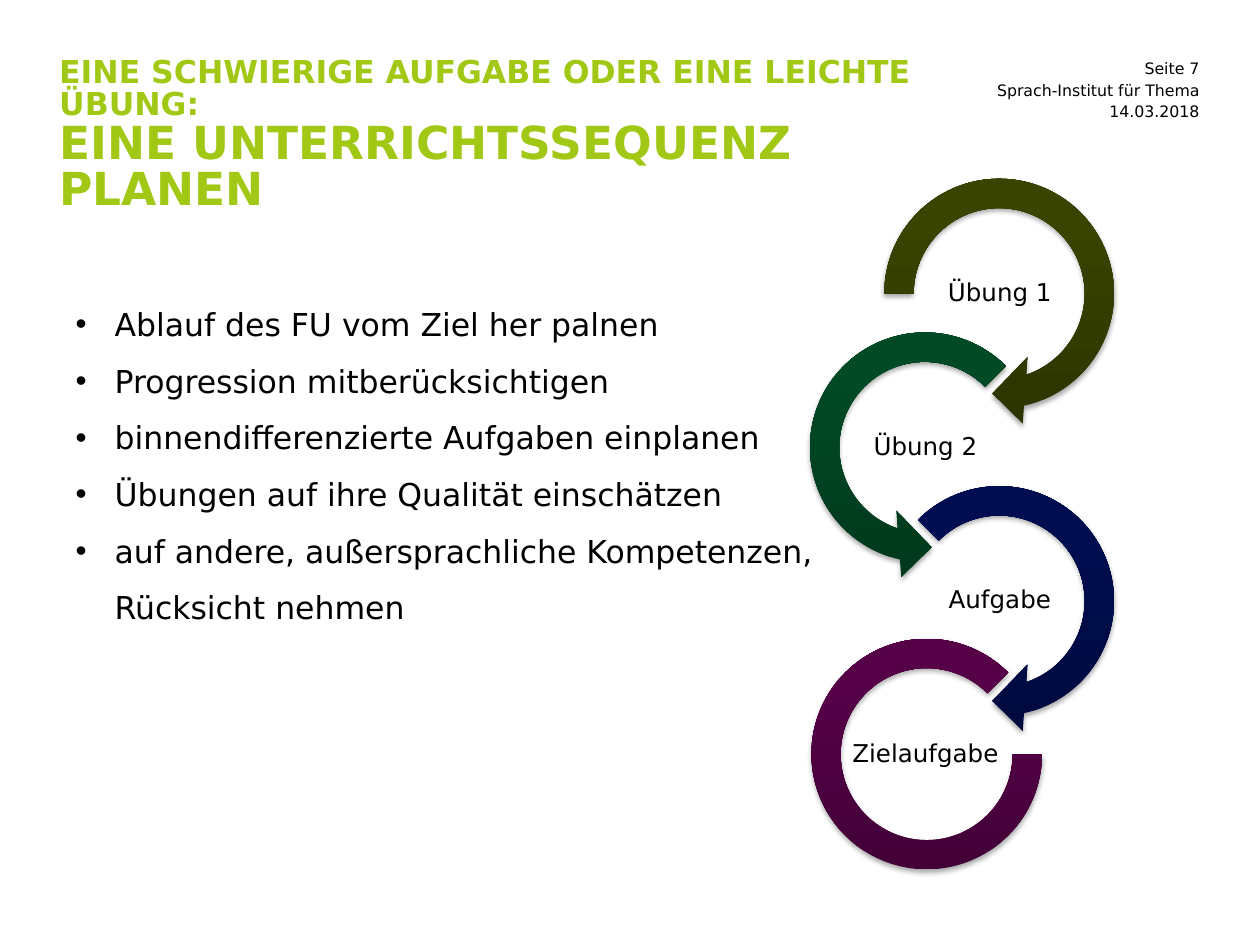
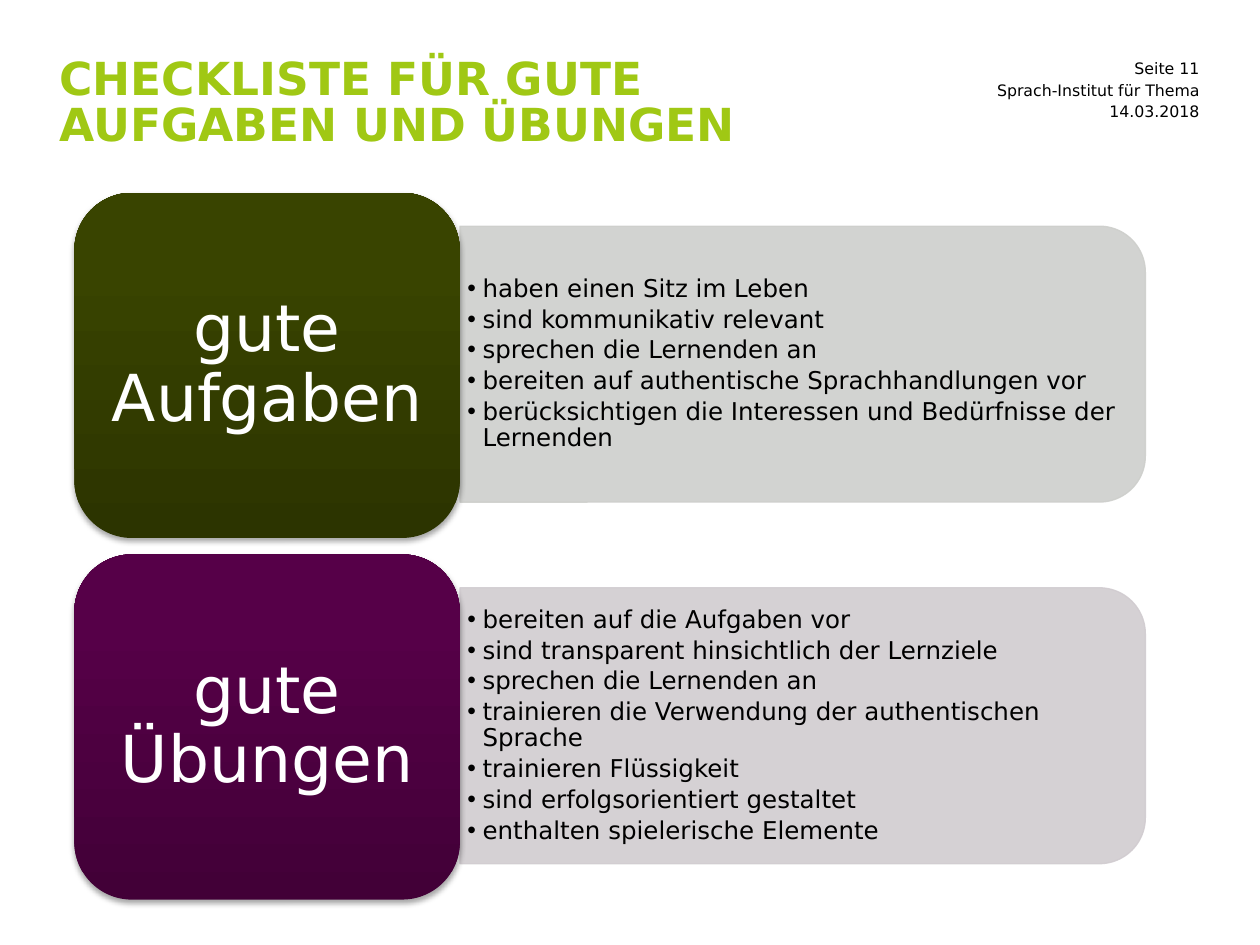
from collections import namedtuple
from lxml import etree
from pptx import Presentation
from pptx import util as u
from pptx.dml.color import RGBColor
from pptx.enum import shapes, text
from pptx.oxml import ns

COLS, ROWS = 100, 75
FONT = "DejaVu Sans"
HUES = {
    "ink": "000000", "white": "FFFFFF", "lime": "A0C814",
    "olive": "394400", "olive low": "2C3400",
    "green": "004A25", "green low": "00391D",
    "navy": "000D50", "navy low": "000A3E",
    "plum": "560048", "plum low": "420037",
    "pale olive": "CECFCC", "pale plum": "D1CCD0",
}
KIND = shapes.MSO_SHAPE
LEFT, MID, RIGHT = text.PP_ALIGN.LEFT, text.PP_ALIGN.CENTER, text.PP_ALIGN.RIGHT
TOP, CORE = text.MSO_ANCHOR.TOP, text.MSO_ANCHOR.MIDDLE

Box = namedtuple("Box", "x y w h")

deck = Presentation()
deck.slide_width, deck.slide_height = u.Inches(10), u.Inches(7.5)


def span(box):
    wide, high = deck.slide_width / COLS, deck.slide_height / ROWS
    return [int(n * unit) for n, unit in zip(box, (wide, high, wide, high))]


def part(box, x, y, w, h):
    return Box(box.x + x, box.y + y, w, h)


def hue(name):
    return RGBColor.from_string(HUES[name])


def place(shape, box):
    shape.left, shape.top, shape.width, shape.height = span(box)
    return shape


def node(root, tag, **attrs):
    return etree.SubElement(root, ns.qn(tag), {k: str(v) for k, v in attrs.items()})


def write(shape, paras, size=14, color="ink", bold=False, align=LEFT, anchor=CORE,
          pad=(0, 0), line=0.9, after=0, hang=0, wrap=True):
    frame = shape.text_frame
    frame.auto_size = text.MSO_AUTO_SIZE.NONE
    frame.word_wrap, frame.vertical_anchor = wrap, anchor
    frame.margin_left = frame.margin_right = u.Inches(pad[0])
    frame.margin_top = frame.margin_bottom = u.Inches(pad[1])
    for i, runs in enumerate(paras):
        para = frame.paragraphs[0] if i == 0 else frame.add_paragraph()
        para.alignment, para.line_spacing = align, line
        para.space_before, para.space_after = u.Pt(0), u.Pt(after)
        for j, (words, points) in enumerate([(runs, size)] if isinstance(runs, str) else runs):
            if j:
                para.add_line_break()
            for k, row in enumerate(words.split("\n")):
                if k:
                    para.add_line_break()
                run = para.add_run()
                run.text = row
                run.font.name, run.font.size, run.font.bold = FONT, u.Pt(points), bold
                run.font.color.rgb = hue(color)
        if hang:
            props = para._p.get_or_add_pPr()
            props.set("marL", str(u.Inches(hang)))
            props.set("indent", str(-u.Inches(hang)))
            node(props, "a:buFont", typeface="Arial")
            node(props, "a:buChar", char="•")


def label(slide, box, words, **form):
    write(slide.shapes.add_textbox(*span(box)), [words], **form)


def solid(slide, kind, box, tone, adjust=()):
    shape = slide.shapes.add_shape(kind, *span(box))
    for i, value in enumerate(adjust):
        shape.adjustments[i] = value
    shape.fill.gradient()
    shape.fill.gradient_angle = 90
    for stop, name, spot in zip(shape.fill.gradient_stops, (tone + " low", tone), (0, 0.8)):
        stop.color.rgb, stop.position = hue(name), spot
    shape.line.fill.background()
    shape.shadow.inherit = False
    effects = shape._element.spPr.find(ns.qn("a:effectLst"))
    shade = node(effects, "a:outerShdw", blurRad=u.Pt(3.1), dist=u.Pt(1.8),
                 dir=5400000, rotWithShape=0)
    node(node(shade, "a:srgbClr", val=HUES["ink"]), "a:alpha", val=35000)
    return shape


def panel(slide, box, tone):
    turned = Box(box.x + (box.w - box.h) / 2, box.y + (box.h - box.w) / 2, box.h, box.w)
    shape = slide.shapes.add_shape(KIND.ROUND_2_SAME_RECTANGLE, *span(turned))
    shape.rotation = 90
    shape.shadow.inherit = False
    shape.line.width = u.Pt(0.75)
    for fill in (shape.fill, shape.line.fill):
        fill.solid()
        fill.fore_color.rgb = hue(tone)
    for color in shape._element.spPr.iter(ns.qn("a:srgbClr")):
        node(color, "a:alpha", val=90000)


def start(layout, title, page, width):
    slide = deck.slides.add_slide(deck.slide_layouts[layout])
    write(place(slide.shapes.title, Box(4.7, 4.6, width, 13.2)), [title],
          size=26, color="lime", bold=True, anchor=TOP, line=0.85)
    for i, words in enumerate((f"Seite {page}", "Sprach-Institut für Thema", "14.03.2018")):
        label(slide, Box(73.2, 4.6 + 1.73 * i, 22, 1.6), words,
              size=9, align=RIGHT, line=1, wrap=False)
    return slide


def chain(slide, box, steps):
    side, pitch = 21.2, 12.2
    for i, (words, kind, tone, adjust) in enumerate(steps):
        cell = part(box, 0 if i % 2 else box.w - side, pitch * i, side, side)
        ring = cell
        if kind == KIND.BLOCK_ARC:
            ring = part(cell, 1.6, 1.4, 18.3, 18.3)
        solid(slide, kind, ring, tone, adjust)
        label(slide, part(cell, 4.7, 7.65, 11.9, 5.9), words, align=MID, pad=(0.01, 0.01))


def card(slide, box, holder, name, items, tone):
    tab = 30.6
    back = part(box, tab, 2.65, box.w - tab, 21.9)
    panel(slide, back, "pale " + tone)
    slide.shapes.title.element.getparent().append(holder.element)
    write(place(holder, part(back, 0, 1.1, 53.4, 19.7)), items,
          pad=(0.06, 0.03), after=2.4, hang=0.12)
    shape = solid(slide, KIND.ROUNDED_RECTANGLE, part(box, 0, 0, tab, box.h), tone)
    write(shape, [name], size=37, color="white", align=MID, pad=(0.15, 0.08))


def plan():
    title = [("EINE SCHWIERIGE AUFGABE ODER EINE LEICHTE ÜBUNG:", 18),
             ("EINE UNTERRICHTSSEQUENZ PLANEN", 26)]
    slide = start(1, title, 7, 75.2)
    write(place(slide.placeholders[1], Box(5, 22.2, 62, 28.3)), [
        "Ablauf des FU vom Ziel her palnen",
        "Progression mitberücksichtigen",
        "binnendifferenzierte Aufgaben einplanen",
        "Übungen auf ihre Qualität einschätzen",
        "auf andere, außersprachliche Kompetenzen,\nRücksicht nehmen",
    ], size=18, anchor=TOP, pad=(0.1, 0.05), line=1.5, hang=0.31)
    head = (0.11, 11.42)
    chain(slide, Box(62.8, 12.7, 27.1, 57.8), [
        ("Übung 1", KIND.CIRCULAR_ARROW, "olive", (*head, 45, 108, 0.125)),
        ("Übung 2", KIND.LEFT_CIRCULAR_ARROW, "green", (*head, 63, 189, 0.125)),
        ("Aufgabe", KIND.CIRCULAR_ARROW, "navy", (*head, 45, 135, 0.125)),
        ("Zielaufgabe", KIND.BLOCK_ARC, "plum", (0, 189, 0.127)),
    ])


def check():
    slide = start(3, "CHECKLISTE FÜR GUTE AUFGABEN UND ÜBUNGEN", 11, 66.9)
    cards = [
        ("gute Aufgaben", "olive", [
            "haben einen Sitz im Leben",
            "sind kommunikativ relevant",
            "sprechen die Lernenden an",
            "bereiten auf authentische Sprachhandlungen vor",
            "berücksichtigen die Interessen und Bedürfnisse der Lernenden",
        ]),
        ("gute Übungen", "plum", [
            "bereiten auf die Aufgaben vor",
            "sind transparent hinsichtlich der Lernziele",
            "sprechen die Lernenden an",
            "trainieren die Verwendung der authentischen Sprache",
            "trainieren Flüssigkeit",
            "sind erfolgsorientiert gestaltet",
            "enthalten spielerische Elemente",
        ]),
    ]
    for i, (name, tone, items) in enumerate(cards):
        card(slide, Box(5.9, 15.3 + 28.7 * i, 85, 27.4),
             slide.placeholders[i + 1], name, items, tone)


def main():
    plan()
    check()
    deck.save("out.pptx")


if __name__ == "__main__":
    main()
